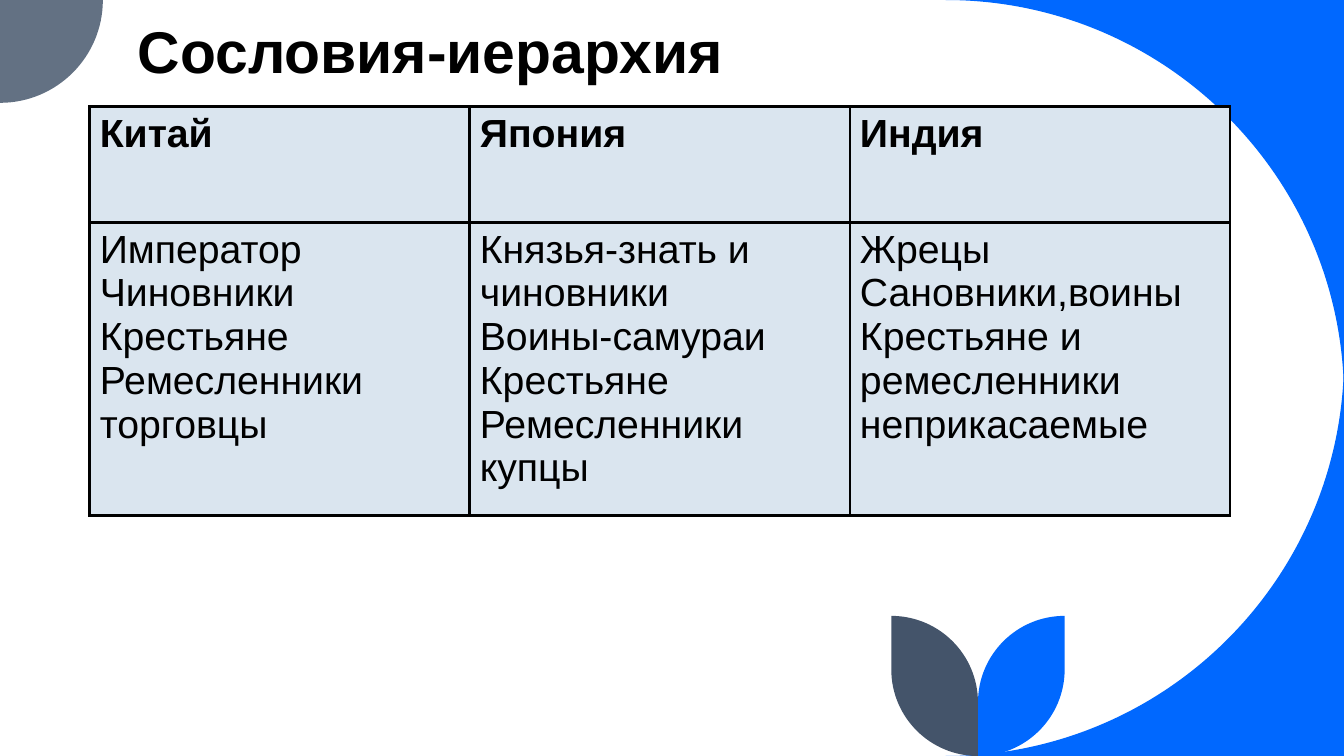
from dataclasses import dataclass
from typing import Optional

from lxml.etree import SubElement
from pptx import Presentation
from pptx.dml.color import RGBColor
from pptx.enum.text import MSO_ANCHOR
from pptx.oxml.ns import qn
from pptx.slide import Slide
from pptx.text.text import TextFrame
from pptx.util import Inches, Pt

Point = tuple[float, float]


@dataclass(frozen=True)
class Theme:
    font: str = "Arial"
    blue: str = "0068FF"
    gray: str = "637183"
    slate: str = "44546A"
    cell: str = "DAE5EF"
    black: str = "000000"
    title_size: float = 42
    table_size: float = 28
    border_width: float = 2.25


@dataclass(frozen=True)
class Segment:
    """A line to the end point, or a quarter circle rounding off the bend."""
    end: Point
    bend: Optional[Point] = None


@dataclass(frozen=True)
class Ornament:
    color: str
    start: Point
    segments: tuple[Segment, ...]


@dataclass(frozen=True)
class Estate:
    country: str
    ranks: tuple[str, ...]


THEME = Theme()
WIDTH, HEIGHT = 13.33, 7.5
SWEEP = 3.95
CORNER = 1.02
LEAF, LEAF_TOP, STEM = 0.86, 6.11, 9.7
QUARTER_CIRCLE = 0.5523


def sweep(corner_y: float, arc_y: float) -> Ornament:
    left = WIDTH - SWEEP
    return Ornament(THEME.blue, (WIDTH, corner_y), (
        Segment((left, corner_y)), Segment((WIDTH, arc_y), (WIDTH, corner_y))))


def leaf(color: str, tip_x: float) -> Ornament:
    return Ornament(color, (tip_x, LEAF_TOP), (
        Segment((tip_x, HEIGHT - LEAF)),
        Segment((STEM, HEIGHT), (tip_x, HEIGHT)),
        Segment((STEM, LEAF_TOP + LEAF)),
        Segment((tip_x, LEAF_TOP), (STEM, LEAF_TOP))))


ORNAMENTS = (
    sweep(0, SWEEP),
    sweep(HEIGHT, HEIGHT - SWEEP),
    Ornament(THEME.gray, (0, 0), (
        Segment((CORNER, 0)), Segment((0, CORNER), (CORNER, CORNER)))),
    leaf(THEME.blue, STEM + LEAF),
    leaf(THEME.slate, STEM - LEAF),
)

ESTATES = (
    Estate("Китай", ("Император", "Чиновники", "Крестьяне", "Ремесленники", "торговцы")),
    Estate("Япония", ("Князья-знать и чиновники", "Воины-самураи", "Крестьяне",
                      "Ремесленники", "купцы")),
    Estate("Индия", ("Жрецы", "Сановники,воины", "Крестьяне и ремесленники",
                     "неприкасаемые")),
)


def write_text(frame: TextFrame, *lines: str, size: float, bold: bool = False,
               spacing: Optional[float] = None) -> None:
    frame.word_wrap = True
    for index, line in enumerate(lines):
        paragraph = frame.add_paragraph() if index else frame.paragraphs[0]
        paragraph.line_spacing = spacing
        run = paragraph.add_run()
        run.text = line
        run.font.name = THEME.font
        run.font.size = Pt(size)
        run.font.bold = bold
        run.font.color.rgb = RGBColor.from_string(THEME.black)


def draw_ornament(slide: Slide, ornament: Ornament) -> None:
    builder = slide.shapes.build_freeform(*map(Inches, ornament.start))
    builder.add_line_segments(
        [tuple(map(Inches, segment.end)) for segment in ornament.segments], close=True)
    shape = builder.convert_to_shape()
    shape.shadow.inherit = False
    shape.fill.solid()
    shape.fill.fore_color.rgb = RGBColor.from_string(ornament.color)
    shape.line.fill.background()

    # Turn the rounded segments into curves
    begin = ornament.start
    lines = list(shape._element.iter(qn("a:lnTo")))
    for line, segment in zip(lines, ornament.segments):
        if segment.bend:
            line.tag = qn("a:cubicBezTo")
            for index, anchor in enumerate((begin, segment.end)):
                x, y = (Inches(a + QUARTER_CIRCLE * (b - a))
                        for a, b in zip(anchor, segment.bend))
                control = SubElement(line, qn("a:pt"), x=str(x - shape.left),
                                     y=str(y - shape.top))
                line.insert(index, control)
        begin = segment.end


def draw_title(slide: Slide, text: str) -> None:
    box = slide.shapes.add_textbox(Inches(1.27), Inches(0.11), Inches(10.4), Inches(0.78))
    box.text_frame.vertical_anchor = MSO_ANCHOR.BOTTOM
    write_text(box.text_frame, text, size=THEME.title_size, bold=True, spacing=0.8)


def draw_table(slide: Slide, estates: tuple[Estate, ...]) -> None:
    column_width, row_heights = 3.77, (1.15, 1.2)
    table = slide.shapes.add_table(
        len(row_heights), len(estates), Inches(0.89), Inches(1.06),
        Inches(8.89), Inches(0.59)).table
    table.first_row = table.horz_banding = False
    for column, estate in enumerate(estates):
        table.columns[column].width = Inches(column_width)
        for row, lines in enumerate(((estate.country,), estate.ranks)):
            cell = table.cell(row, column)
            write_text(cell.text_frame, *lines, size=THEME.table_size, bold=row == 0)
            # Borders come before the fill in the cell properties
            properties = cell._tc.get_or_add_tcPr()
            for side in ("lnL", "lnR", "lnT", "lnB"):
                border = SubElement(properties, qn(f"a:{side}"), w=str(Pt(THEME.border_width)))
                fill = SubElement(border, qn("a:solidFill"))
                SubElement(fill, qn("a:srgbClr"), val=THEME.black)
            cell.fill.solid()
            cell.fill.fore_color.rgb = RGBColor.from_string(THEME.cell)
    for row, height in zip(table.rows, row_heights):
        row.height = Inches(height)
    # The frame keeps its own size, apart from the columns and rows
    frame = slide.shapes[-1]
    frame.width, frame.height = Inches(8.89), Inches(0.59)


def main() -> None:
    presentation = Presentation()
    presentation.slide_width, presentation.slide_height = Inches(WIDTH), Inches(HEIGHT)
    slide = presentation.slides.add_slide(presentation.slide_layouts[6])
    for ornament in ORNAMENTS:
        draw_ornament(slide, ornament)
    draw_title(slide, "Сословия-иерархия")
    draw_table(slide, ESTATES)
    presentation.save("out.pptx")


if __name__ == "__main__":
    main()
